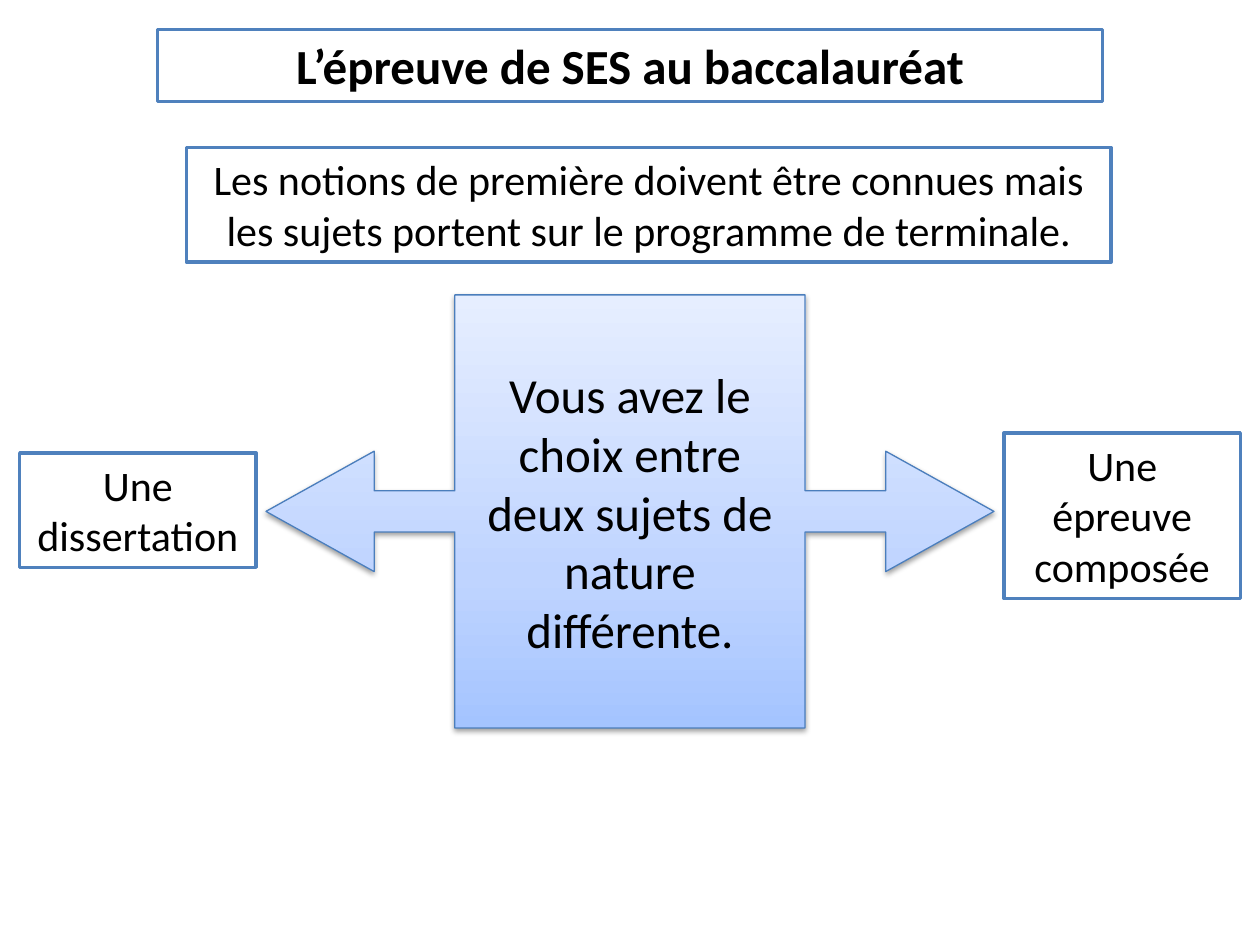
from copy import deepcopy
from dataclasses import dataclass

from lxml.etree import SubElement
from pptx import Presentation
from pptx.dml.color import RGBColor
from pptx.enum.shapes import MSO_SHAPE
from pptx.enum.text import MSO_ANCHOR, MSO_AUTO_SIZE, PP_ALIGN
from pptx.oxml.ns import qn
from pptx.shapes.autoshape import Shape
from pptx.slide import Slide
from pptx.util import Pt

BLACK = RGBColor(0x00, 0x00, 0x00)
WHITE = RGBColor(0xFF, 0xFF, 0xFF)
BLUE = RGBColor(0x4F, 0x81, 0xBD)
EDGE = RGBColor(0x4B, 0x7E, 0xBC)
DEEP = RGBColor(0xA4, 0xC4, 0xFF)
SOFT = RGBColor(0xBF, 0xD4, 0xFF)
PALE = RGBColor(0xE6, 0xEE, 0xFF)


@dataclass
class Box:
    text: str
    left: float
    top: float
    width: float
    height: float
    size: int = 24
    bold: bool = False


CHOICE = Box("Vous avez le choix entre deux sujets de nature différente.",
             152, 168.5, 416, 247.5, 28)
BOXES = [
    Box("L’épreuve de SES au baccalauréat", 90, 16.75, 540, 41.2, 28, True),
    Box("Les notions de première doivent être connues mais les sujets "
        "portent sur le programme de terminale.", 106.5, 84.25, 528.5, 65.45),
    Box("Une dissertation", 11.25, 258.75, 135, 65.45),
    Box("Une épreuve composée", 573.75, 247.5, 135, 94.5),
]


def draw(slide: Slide, box: Box, kind: MSO_SHAPE, edge: RGBColor, weight: float) -> Shape:
    shape = slide.shapes.add_shape(
        kind, Pt(box.left), Pt(box.top), Pt(box.width), Pt(box.height))
    shape.shadow.inherit = False
    shape.line.color.rgb = edge
    shape.line.width = Pt(weight)
    frame = shape.text_frame
    frame.text = box.text
    frame.word_wrap = True
    para = frame.paragraphs[0]
    para.alignment = PP_ALIGN.CENTER
    font = para.runs[0].font
    font.name = "Calibri"
    font.size = Pt(box.size)
    font.bold = box.bold
    font.color.rgb = BLACK
    return shape


def draw_box(slide: Slide, box: Box) -> None:
    shape = draw(slide, box, MSO_SHAPE.RECTANGLE, BLUE, 2)
    shape.fill.solid()
    shape.fill.fore_color.rgb = WHITE
    shape.text_frame.vertical_anchor = MSO_ANCHOR.TOP
    shape.text_frame.auto_size = MSO_AUTO_SIZE.SHAPE_TO_FIT_TEXT


def shade(shape: Shape) -> None:
    shape.fill.gradient()
    shape.fill.gradient_angle = 90
    stops = shape.element.spPr.find(".//" + qn("a:gsLst"))
    stops.append(deepcopy(stops[-1]))
    tints = [(0, DEEP), (0.35, SOFT), (1, PALE)]
    for stop, (place, tint) in zip(shape.fill.gradient_stops, tints):
        stop.position = place
        stop.color.rgb = tint


def cast(shape: Shape) -> None:
    effects = shape.element.spPr.find(qn("a:effectLst"))
    shadow = SubElement(effects, qn("a:outerShdw"), blurRad=str(Pt(3.1)),
                        dist=str(Pt(1.6)), dir="5400000", rotWithShape="0")
    color = SubElement(shadow, qn("a:srgbClr"), val=str(BLACK))
    SubElement(color, qn("a:alpha"), val="38000")


def draw_choice(slide: Slide, box: Box) -> None:
    shape = draw(slide, box, MSO_SHAPE.LEFT_RIGHT_ARROW_CALLOUT, EDGE, 0.75)
    for index, value in enumerate([0.095, 0.139, 0.25, 0.481]):
        shape.adjustments[index] = value
    shape.text_frame.vertical_anchor = MSO_ANCHOR.MIDDLE
    shade(shape)
    cast(shape)


def main() -> None:
    deck = Presentation()
    deck.slide_width, deck.slide_height = Pt(720), Pt(540)
    slide = deck.slides.add_slide(deck.slide_layouts[6])
    draw_choice(slide, CHOICE)
    for box in BOXES:
        draw_box(slide, box)
    deck.save("out.pptx")


if __name__ == "__main__":
    main()
